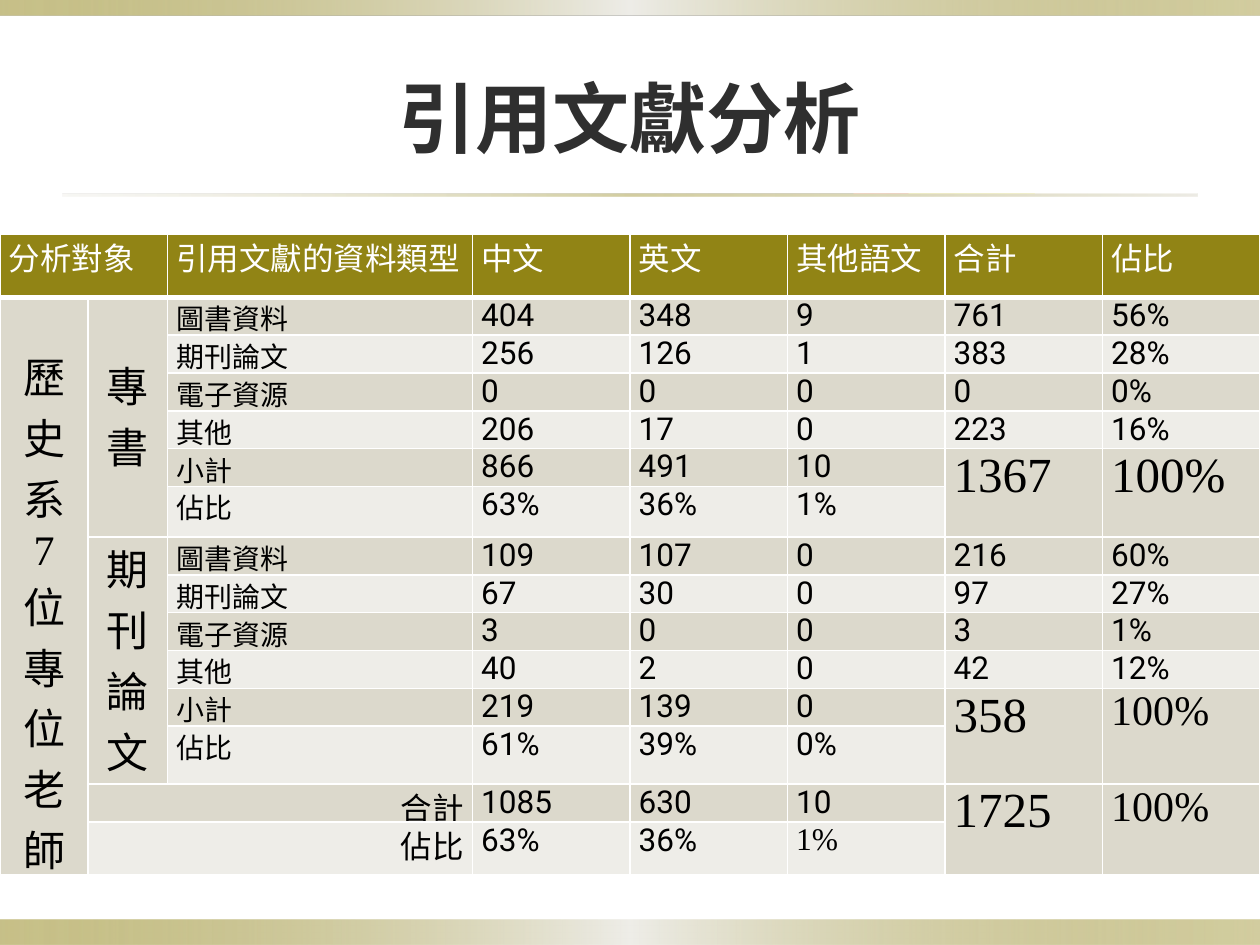
import pptx
import pptx.dml.color
import pptx.enum.text
import pptx.oxml
import pptx.oxml.ns
import pptx.util
from lxml import etree
from pptx.util import Inches

ALIGN = pptx.enum.text.PP_ALIGN
SERIF, SANS, CJK = "Times New Roman", "Roboto", "Noto Sans CJK SC"
OLIVE, BAND_DARK, BAND_LIGHT = "918415", "DCD9CC", "EEEDE8"
WHITE, BLACK, TITLE_GREY = "FFFFFF", "000000", "2F2F2F"

BAR_STOPS = [(0, OLIVE, 50), (50, BAND_LIGHT, 100), (100, OLIVE, 40)]
RULE_STOPS = [(0, BAND_DARK, 20), (50, OLIVE, 40), (100, BAND_DARK, 50)]

COLUMN_WIDTHS = [0.7, 0.63, 2.42] + [1.25] * 5
ROW_HEIGHTS = [0.5] + [0.3] * 5 + [0.4] + [0.3] * 5 + [0.46, 0.3, 0.42]

HEADER = ["分析對象", "", "引用文獻的資料類型", "中文", "英文", "其他語文", "合計", "佔比"]
SOURCE_TYPES = ["圖書資料", "期刊論文", "電子資源", "其他", "小計", "佔比"]
BOOK_COUNTS = [
    ["404", "348", "9", "761", "56%"],
    ["256", "126", "1", "383", "28%"],
    ["0", "0", "0", "0", "0%"],
    ["206", "17", "0", "223", "16%"],
    ["866", "491", "10", "1367", "100%"],
    ["63%", "36%", "1%"],
]
ARTICLE_COUNTS = [
    ["109", "107", "0", "216", "60%"],
    ["67", "30", "0", "97", "27%"],
    ["3", "0", "0", "3", "1%"],
    ["40", "2", "0", "42", "12%"],
    ["219", "139", "0", "358", "100%"],
    ["61%", "39%", "0%"],
]
OVERALL_COUNTS = [["1085", "630", "10", "1725", "100%"], ["63%", "36%", "1%"]]
BOOK_ROW, ARTICLE_ROW, OVERALL_ROW = 1, 7, 13
TOTAL_ROWS = {5: 28, 11: 24, 13: 24}  # first row of each total: size of its percentage


def rgb(color):
    return pptx.dml.color.RGBColor.from_string(color)


def style_paragraph(para, size, color, font=SERIF, align=None):
    para.font.size = pptx.util.Pt(size)
    para.font.color.rgb = rgb(color)
    para.font.name = font
    para.alignment = align


def add_gradient_bar(page, left, top, width, height, stops):
    """Add a borderless bar; stops are (position, colour, opacity) in percent."""
    bar = page.shapes.add_shape(1, Inches(left), Inches(top), Inches(width), Inches(height))
    bar.shadow.inherit = False
    bar.line.fill.background()
    bar.fill.gradient()
    bar.fill.gradient_angle = 0
    stop_list = bar.fill._fill._gradFill.find(pptx.oxml.ns.qn("a:gsLst"))
    for stop in list(stop_list):
        stop_list.remove(stop)
    for position, color, opacity in stops:
        stop = etree.SubElement(stop_list, pptx.oxml.ns.qn("a:gs"), pos=str(position * 1000))
        tint = etree.SubElement(stop, pptx.oxml.ns.qn("a:srgbClr"), val=color)
        etree.SubElement(tint, pptx.oxml.ns.qn("a:alpha"), val=str(opacity * 1000))


def add_title(page, text):
    box = page.shapes.add_textbox(Inches(0.5), Inches(0.3), Inches(9), Inches(1.25))
    frame = box.text_frame
    frame.word_wrap = True
    frame.vertical_anchor = pptx.enum.text.MSO_ANCHOR.MIDDLE
    para = frame.paragraphs[0]
    span = para.add_run()
    span.text = text
    style_paragraph(para, 44, TITLE_GREY, CJK, ALIGN.CENTER)
    para.font.bold = True
    span.font.name = CJK
    latin = span.font._element.find(pptx.oxml.ns.qn("a:latin"))
    east_asian = etree.Element(pptx.oxml.ns.qn("a:ea"), typeface=CJK)
    latin.addnext(east_asian)


def set_borders(cell, bottom_width):
    properties = cell._tc.get_or_add_tcPr()
    for side, width in (("L", 1), ("R", 1), ("T", 1), ("B", bottom_width)):
        line = etree.SubElement(
            properties, pptx.oxml.ns.qn(f"a:ln{side}"), w=str(pptx.util.Pt(width)))
        fill = etree.SubElement(line, pptx.oxml.ns.qn("a:solidFill"))
        etree.SubElement(fill, pptx.oxml.ns.qn("a:srgbClr"), val=WHITE)


def format_cell(cell, row):
    set_borders(cell, 3 if row == 0 else 1)
    cell.fill.solid()
    band = BAND_DARK if row % 2 else BAND_LIGHT
    cell.fill.fore_color.rgb = rgb(OLIVE if row == 0 else band)
    cell.margin_left = cell.margin_right = Inches(0.07)
    cell.margin_top = cell.margin_bottom = 0


def write_cell(cell, text, size=18, color=BLACK, font=SERIF, align=None, top=0):
    cell.text = text
    cell.margin_top = Inches(top)
    for para in cell.text_frame.paragraphs:
        style_paragraph(para, size, color, font, align)


def write_counts(table, first_row, counts):
    for row, values in enumerate(counts, first_row):
        for column, text in enumerate(values, 3):
            write_cell(table.cell(row, column), text, font=SANS)


def write_source_group(table, first_row, counts):
    for row, label in enumerate(SOURCE_TYPES, first_row):
        write_cell(table.cell(row, 2), label, 16)
    write_counts(table, first_row, counts)


def merge_cells(table):
    spans = [(0, 0, 0, 1), (1, 0, 14, 0), (1, 1, 6, 1), (7, 1, 12, 1),
             (13, 1, 13, 2), (14, 1, 14, 2)]
    spans += [(row, column, row + 1, column) for row in TOTAL_ROWS for column in (6, 7)]
    for top, left, bottom, right in spans:
        table.cell(top, left).merge(table.cell(bottom, right))


def add_citation_table(page):
    table = page.shapes.add_table(
        len(ROW_HEIGHTS), len(COLUMN_WIDTHS),
        0, Inches(1.86), Inches(10), Inches(5.12)).table
    table.first_row = table.horz_banding = False
    for column, width in zip(table.columns, COLUMN_WIDTHS):
        column.width = Inches(width)
    for index, (row, height) in enumerate(zip(table.rows, ROW_HEIGHTS)):
        row.height = Inches(height)
        for cell in row.cells:
            format_cell(cell, index)
    merge_cells(table)

    for column, text in enumerate(HEADER):
        if text:
            write_cell(table.cell(0, column), text, color=WHITE)
    # The narrow columns wrap these labels to one character a line.
    write_cell(table.cell(1, 0), "歷史系\n7\n位專位老師", 24, align=ALIGN.CENTER, top=0.38)
    write_cell(table.cell(BOOK_ROW, 1), "專書", 24, align=ALIGN.CENTER, top=0.45)
    write_cell(table.cell(ARTICLE_ROW, 1), "期刊論文", 24, align=ALIGN.CENTER)
    write_source_group(table, BOOK_ROW, BOOK_COUNTS)
    write_source_group(table, ARTICLE_ROW, ARTICLE_COUNTS)
    for row, label in enumerate(["合計", "佔比"], OVERALL_ROW):
        write_cell(table.cell(row, 1), label, align=ALIGN.RIGHT)
    write_counts(table, OVERALL_ROW, OVERALL_COUNTS)

    for row, percent_size in TOTAL_ROWS.items():
        for column, size in ((6, 28), (7, percent_size)):
            style_paragraph(table.cell(row, column).text_frame.paragraphs[0], size, BLACK)
    style_paragraph(table.cell(14, 5).text_frame.paragraphs[0], 18, BLACK)


def main():
    deck = pptx.Presentation()
    deck.slide_width, deck.slide_height = Inches(10), Inches(7.5)
    page = deck.slides.add_slide(deck.slide_layouts[6])
    add_gradient_bar(page, 0, 7.3, 10, 0.2, BAR_STOPS)
    add_gradient_bar(page, 0, 0, 10, 0.12, BAR_STOPS)
    add_gradient_bar(page, 0.5, 1.54, 9, 0.02, RULE_STOPS)
    add_title(page, "引用文獻分析")
    add_citation_table(page)
    deck.save("out.pptx")


if __name__ == "__main__":
    main()
